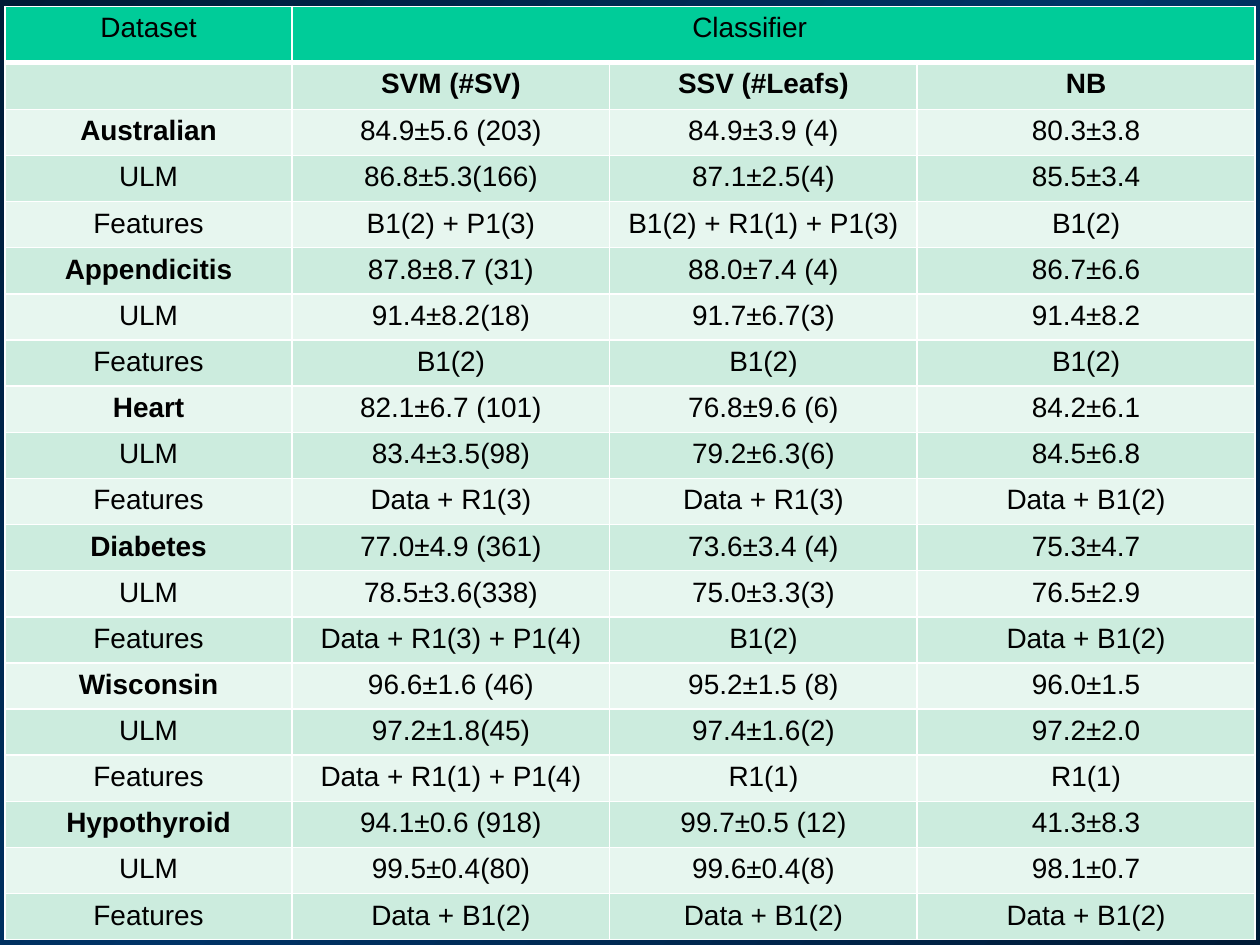
from copy import deepcopy
from dataclasses import dataclass

from lxml.etree import SubElement
from pptx import Presentation
from pptx.dml.color import RGBColor
from pptx.enum.text import PP_ALIGN as Align
from pptx.oxml.ns import qn
from pptx.slide import Slide
from pptx.table import Table, _Cell as Cell
from pptx.util import Cm, Pt

FONT, SIZE = "Arial", 16
BLACK, WHITE = "000000", "FFFFFF"
HEADER, BANDS = "00CC99", ("CCECDE", "E7F6EF")
NIGHT, NAVY = "001B36", "003366"
COLUMN_WIDTHS = (5.79, 6.4, 6.2, 6.81)
HEADER_HEIGHT, ROW_HEIGHT = 1.13, 0.93


@dataclass
class Result:
    """One dataset; each tuple holds the SVM, SSV and NB columns."""
    dataset: str
    baseline: tuple[str, str, str]
    ulm: tuple[str, str, str]
    features: tuple[str, str, str]


RESULTS = [
    Result("Australian",
           ("84.9±5.6 (203)", "84.9±3.9 (4)", "80.3±3.8"),
           ("86.8±5.3(166)", "87.1±2.5(4)", "85.5±3.4"),
           ("B1(2) + P1(3)", "B1(2) + R1(1) + P1(3)", "B1(2)")),
    Result("Appendicitis",
           ("87.8±8.7 (31)", "88.0±7.4 (4)", "86.7±6.6"),
           ("91.4±8.2(18)", "91.7±6.7(3)", "91.4±8.2"),
           ("B1(2)", "B1(2)", "B1(2)")),
    Result("Heart",
           ("82.1±6.7 (101)", "76.8±9.6 (6)", "84.2±6.1"),
           ("83.4±3.5(98)", "79.2±6.3(6)", "84.5±6.8"),
           ("Data + R1(3)", "Data + R1(3)", "Data + B1(2)")),
    Result("Diabetes",
           ("77.0±4.9 (361)", "73.6±3.4 (4)", "75.3±4.7"),
           ("78.5±3.6(338)", "75.0±3.3(3)", "76.5±2.9"),
           ("Data + R1(3) + P1(4)", "B1(2)", "Data + B1(2)")),
    Result("Wisconsin",
           ("96.6±1.6 (46)", "95.2±1.5 (8)", "96.0±1.5"),
           ("97.2±1.8(45)", "97.4±1.6(2)", "97.2±2.0"),
           ("Data + R1(1) + P1(4)", "R1(1)", "R1(1)")),
    Result("Hypothyroid",
           ("94.1±0.6 (918)", "99.7±0.5 (12)", "41.3±8.3"),
           ("99.5±0.4(80)", "99.6±0.4(8)", "98.1±0.7"),
           ("Data + B1(2)", "Data + B1(2)", "Data + B1(2)")),
]


def color(value: str) -> RGBColor:
    return RGBColor.from_string(value)


def write(cell: Cell, text: str, *, bold: bool = False, size: int = SIZE,
          ink: str = BLACK, align: Align = Align.CENTER) -> None:
    para = cell.text_frame.paragraphs[0]
    para.alignment = align
    if not text:
        # An empty cell still needs the text size, or its row grows
        SubElement(para._p, qn("a:endParaRPr"), sz=str(size * 100))
        return
    span = para.add_run()
    span.text = text
    span.font.name, span.font.size, span.font.bold = FONT, Pt(size), bold
    span.font.color.rgb = color(ink)


def paint(cell: Cell, fill: str, bottom: int = 1) -> None:
    """Give a cell white borders, then its fill."""
    properties = cell._tc.get_or_add_tcPr()
    for side, width in (("L", 1), ("R", 1), ("T", 1), ("B", bottom)):
        line = SubElement(properties, qn(f"a:ln{side}"), w=str(Pt(width)))
        solid = SubElement(line, qn("a:solidFill"))
        SubElement(solid, qn("a:srgbClr"), val=WHITE)
    cell.fill.solid()
    cell.fill.fore_color.rgb = color(fill)


def paint_background(page: Slide) -> None:
    fill = page.background.fill
    fill.gradient()
    fill.gradient_angle = 315
    stops = page.element.find(f".//{qn('a:gsLst')}")
    stops.append(deepcopy(stops[0]))
    for stop, place, shade in zip(fill.gradient_stops, (0, 0.5, 1), (NIGHT, NAVY, NIGHT)):
        stop.position = place
        stop.color.rgb = color(shade)


def table_rows() -> list[tuple[str, ...]]:
    rows = [("Dataset", "Classifier", "", ""),
            ("", "SVM (#SV)", "SSV (#Leafs)", "NB")]
    for result in RESULTS:
        rows += [(result.dataset, *result.baseline),
                 ("ULM", *result.ulm),
                 ("Features", *result.features)]
    return rows


def fill_table(table: Table, rows: list[tuple[str, ...]]) -> None:
    datasets = {result.dataset for result in RESULTS}
    for row_index, texts in enumerate(rows):
        is_header = row_index == 0
        table.rows[row_index].height = Cm(HEADER_HEIGHT if is_header else ROW_HEIGHT)
        fill = HEADER if is_header else BANDS[(row_index - 1) % 2]
        for column_index, text in enumerate(texts):
            cell = table.cell(row_index, column_index)
            write(cell, text, bold=row_index == 1 or text in datasets)
            paint(cell, fill, bottom=3 if is_header else 1)


def main() -> None:
    deck = Presentation()
    deck.slide_width, deck.slide_height = Cm(25.4), Cm(19.05)
    page = deck.slides.add_slide(deck.slide_layouts[6])
    paint_background(page)

    # Results table
    rows = table_rows()
    height = HEADER_HEIGHT + ROW_HEIGHT * (len(rows) - 1)
    table = page.shapes.add_table(len(rows), len(COLUMN_WIDTHS), Cm(0.1), Cm(0.13),
                                  Cm(sum(COLUMN_WIDTHS)), Cm(height)).table
    table.horz_banding = False
    for column, width in zip(table.columns, COLUMN_WIDTHS):
        column.width = Cm(width)
    fill_table(table, rows)

    # The classifier heading spans three columns, a little left of centre
    heading = table.cell(0, 1)
    heading.merge(table.cell(0, 3))
    heading.margin_right = Cm(1.22)

    deck.save("out.pptx")


if __name__ == "__main__":
    main()
